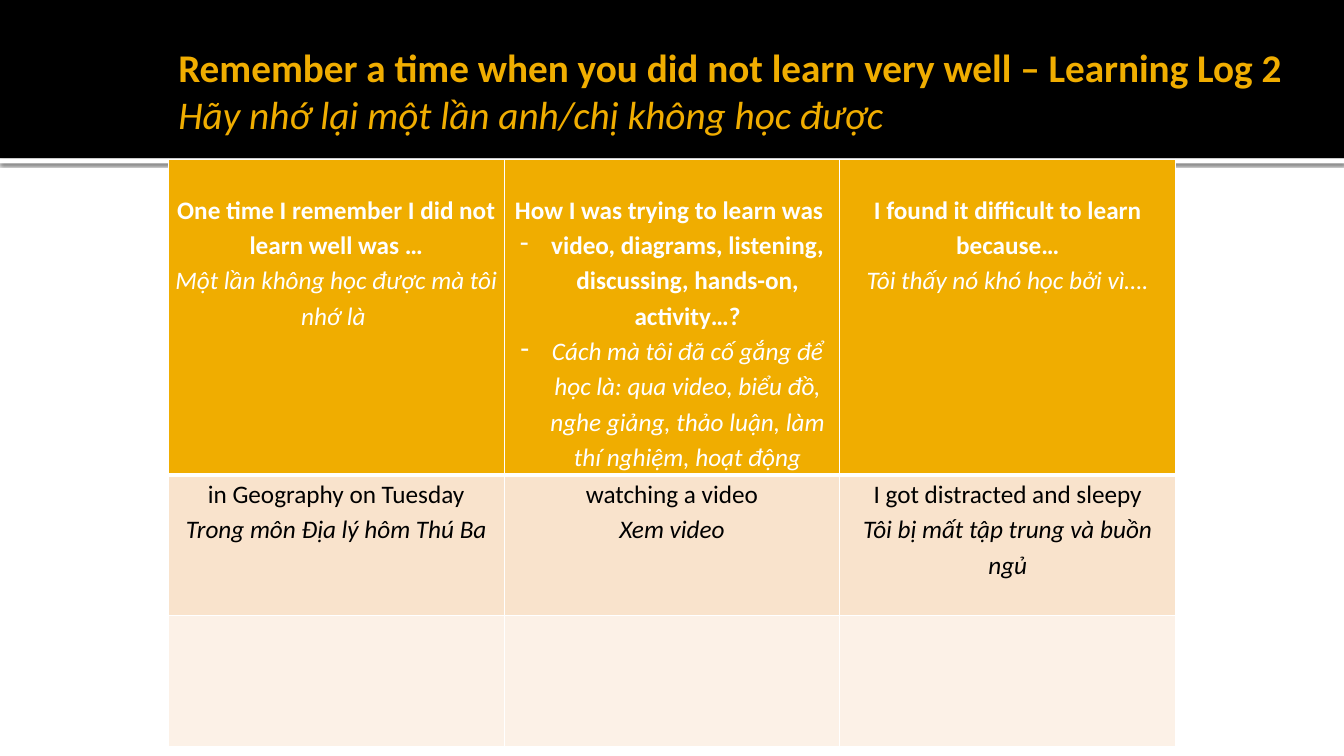
from lxml import etree
from pptx import Presentation
from pptx.dml.color import RGBColor
from pptx.enum.shapes import MSO_SHAPE
from pptx.enum.text import MSO_ANCHOR, PP_ALIGN
from pptx.oxml.ns import qn
from pptx.util import Inches, Pt

RECTANGLE = MSO_SHAPE.RECTANGLE
MIDDLE = MSO_ANCHOR.MIDDLE
CENTER = PP_ALIGN.CENTER
FONT = "Calibri"
COLORS = {
    "white": "FFFFFF",
    "black": "000000",
    "gold": "F0AD00",
    "peach": "F9E3CC",
    "cream": "FCF1E7",
}
ROW_HEIGHTS = [3.13, 1.4, 1.3]
ROW_FILLS = ["gold", "peach", "cream"]
COLUMN_WIDTH = 3.33
HEADER_GAP = 0.31
BULLET_INDENT = 0.31

HEADERS = [
    [
        ("One time I remember I did not learn well was …", False, False),
        ("Một lần không học được mà tôi nhớ là ", True, False),
    ],
    [
        ("How I was trying to learn was ", False, False),
        ("video, diagrams, listening, discussing, hands-on, activity…?", False, True),
        ("Cách mà tôi đã cố gắng để học là: qua video, biểu đồ, nghe giảng, "
         "thảo luận, làm thí nghiệm, hoạt động", True, True),
    ],
    [
        ("I found it difficult to learn because…", False, False),
        ("Tôi thấy nó khó học bởi vì….", True, False),
    ],
]
ANSWERS = [
    [("in Geography on Tuesday", False, False), ("Trong môn Địa lý hôm Thú Ba", True, False)],
    [("watching a video", False, False), ("Xem video", True, False)],
    [
        ("I got distracted and sleepy", False, False),
        ("Tôi bị mất tập trung và buồn ngủ", True, False),
    ],
]
ROWS = [HEADERS, ANSWERS, [[], [], []]]


def color(name):
    return RGBColor.from_string(COLORS[name])


def style_font(font, size, color_name, bold, italic):
    font.name = FONT
    font.size = Pt(size)
    font.color.rgb = color(color_name)
    font.bold = bold
    font.italic = italic


def add_band(page, top, height, color_name):
    band = page.shapes.add_shape(RECTANGLE, 0, Inches(top), Inches(13.33), Inches(height))
    band.shadow.inherit = False
    band.fill.solid()
    band.fill.fore_color.rgb = color(color_name)
    band.line.fill.background()
    return band


def add_shadow(shape):
    effects = shape._element.spPr.find(qn("a:effectLst"))
    shadow = etree.SubElement(
        effects, qn("a:outerShdw"), blurRad=str(Pt(2.5)), dist=str(Pt(0.8)),
        dir="5400000", algn="tl", rotWithShape="0",
    )
    tint = etree.SubElement(shadow, qn("a:srgbClr"), val=COLORS["black"])
    etree.SubElement(tint, qn("a:alpha"), val="60000")


def add_title(page, english, vietnamese):
    box = page.shapes.add_textbox(Inches(1.67), Inches(0.21), Inches(12), Inches(1.37))
    frame = box.text_frame
    frame.word_wrap = True
    frame.vertical_anchor = MIDDLE
    frame.margin_right = Inches(0.05)
    para = frame.paragraphs[0]
    para.text = f"{english}\v{vietnamese}"
    for span, italic in zip(para.runs, (False, True)):
        style_font(span.font, 28, "gold", not italic, italic)


def add_bullet(para):
    properties = para._p.get_or_add_pPr()
    properties.set("marL", str(Inches(BULLET_INDENT)))
    properties.set("indent", str(-Inches(BULLET_INDENT)))
    etree.SubElement(properties, qn("a:buChar"), char="-")


def add_borders(cell, is_header):
    properties = cell._tc.get_or_add_tcPr()
    for side in "LRTB":
        width = 3 if is_header and side == "B" else 1
        line = etree.SubElement(properties, qn(f"a:ln{side}"), w=str(Pt(width)))
        fill = etree.SubElement(line, qn("a:solidFill"))
        etree.SubElement(fill, qn("a:srgbClr"), val=COLORS["white"])


def fill_cell(cell, lines, fill_name, is_header):
    add_borders(cell, is_header)
    cell.fill.solid()
    cell.fill.fore_color.rgb = color(fill_name)
    cell.margin_left = cell.margin_right = Inches(0.06)
    cell.margin_top = Inches(HEADER_GAP if is_header else 0)
    cell.margin_bottom = 0
    if not lines:
        return
    frame = cell.text_frame
    frame.text = "\n".join(text for text, _, _ in lines)
    for para, (_, italic, bulleted) in zip(frame.paragraphs, lines):
        para.alignment = CENTER
        para.line_spacing = 1.15
        if bulleted:
            add_bullet(para)
        text_color = "white" if is_header else "black"
        style_font(para.runs[0].font, 18, text_color, is_header and not italic, italic)


def add_learning_table(page):
    frame = page.shapes.add_table(
        len(ROWS), len(HEADERS), Inches(1.67), Inches(1.58),
        Inches(COLUMN_WIDTH * len(HEADERS)), Inches(sum(ROW_HEIGHTS)),
    )
    table = frame.table
    table.horz_banding = False
    for column in table.columns:
        column.width = Inches(COLUMN_WIDTH)
    for row_index, (cells, height, fill_name) in enumerate(zip(ROWS, ROW_HEIGHTS, ROW_FILLS)):
        table.rows[row_index].height = Inches(height)
        for column_index, lines in enumerate(cells):
            fill_cell(table.cell(row_index, column_index), lines, fill_name, row_index == 0)


def main():
    deck = Presentation()
    deck.slide_width = Inches(13.33)
    deck.slide_height = Inches(7.5)
    page = deck.slides.add_slide(deck.slide_layouts[6])
    add_shadow(add_band(page, 1.57, 0.05, "white"))
    add_band(page, 0, 1.57, "black")
    add_title(
        page,
        "Remember a time when you did not learn very well – Learning Log 2",
        "Hãy nhớ lại một lần anh/chị không học được",
    )
    add_learning_table(page)
    deck.save("out.pptx")


if __name__ == "__main__":
    main()
